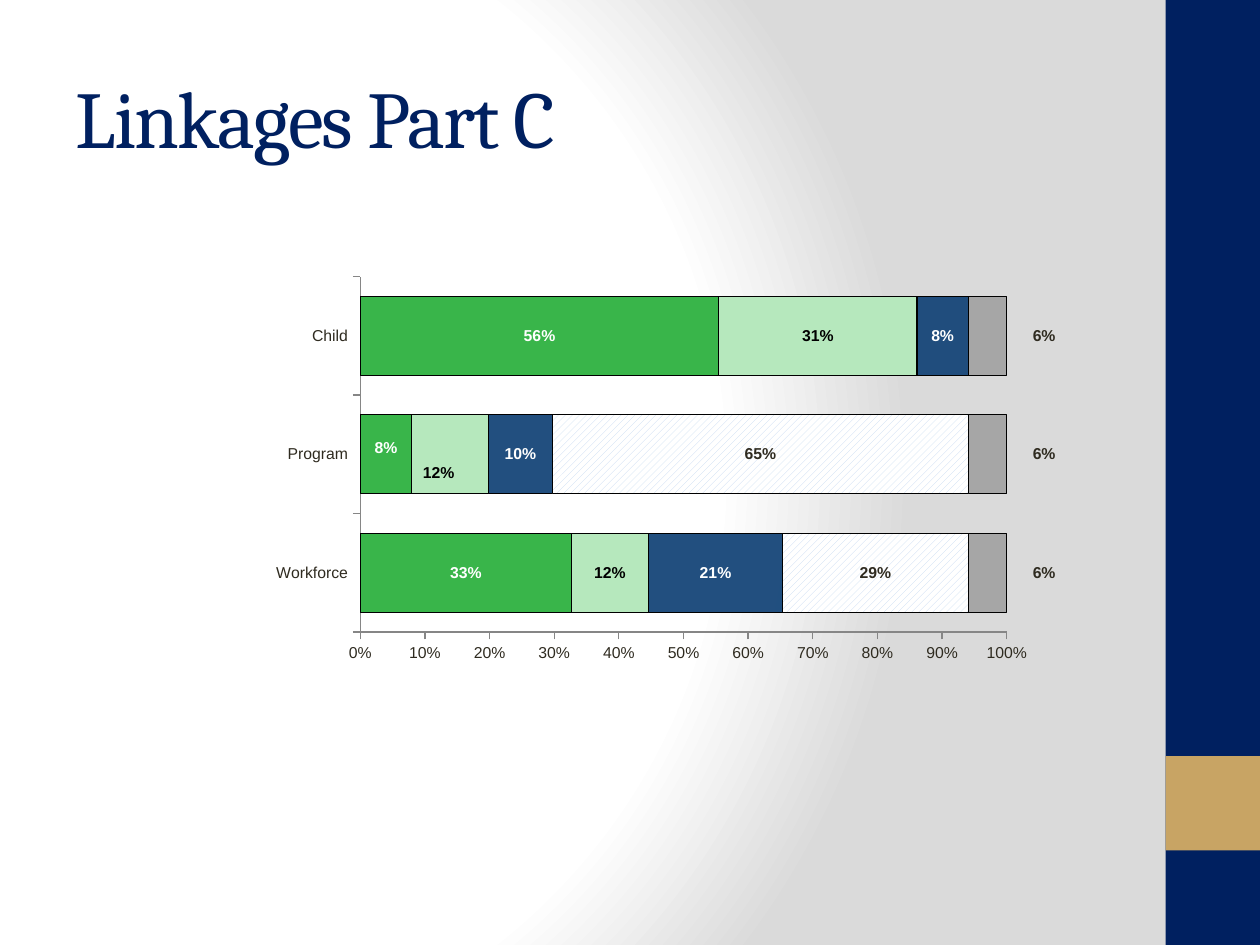
from lxml.etree import SubElement
from pptx import Presentation
from pptx.chart.data import CategoryChartData
from pptx.dml.color import RGBColor
from pptx.enum.chart import XL_CHART_TYPE, XL_LABEL_POSITION, XL_TICK_MARK
from pptx.enum.dml import MSO_PATTERN
from pptx.enum.shapes import MSO_SHAPE
from pptx.enum.text import MSO_ANCHOR, PP_ALIGN
from pptx.oxml import parse_xml
from pptx.oxml.ns import nsdecls, qn
from pptx.util import Inches, Pt

NAVY = RGBColor(0x00, 0x20, 0x60)
GOLD = RGBColor(0xC8, 0xA4, 0x64)
INK = RGBColor(0x2F, 0x2B, 0x20)
GREEN = RGBColor(0x39, 0xB5, 0x4A)
MINT = RGBColor(0xB6, 0xE8, 0xBD)
BLUE = RGBColor(0x15, 0x45, 0x78)
PALE = RGBColor(0xC6, 0xD9, 0xF1)
GREY = RGBColor(0xA6, 0xA6, 0xA6)
SILVER = RGBColor(0xDA, 0xDA, 0xDA)
AXIS = RGBColor(0x86, 0x86, 0x86)
WHITE = RGBColor(0xFF, 0xFF, 0xFF)
BLACK = RGBColor(0x00, 0x00, 0x00)


def set_font(font, color, **values):
    for name, value in values.items():
        setattr(font, name, value)
    font.color.rgb = color


def manual_layout(**values):
    items = "".join(f'<c:{tag} val="{value}"/>' for tag, value in values.items())
    return parse_xml(f'<c:layout {nsdecls("c")}>'
                     f'<c:manualLayout>{items}</c:manualLayout></c:layout>')


prs = Presentation()
prs.slide_width, prs.slide_height = Inches(10), Inches(7.5)
s = prs.slides.add_slide(prs.slide_layouts[5])

stops = "".join(f'<a:gs pos="{pos}"><a:srgbClr val="{color}"/></a:gs>'
                for pos, color in ((0, WHITE), (75000, WHITE), (100000, SILVER)))
s.element.cSld.insert(0, parse_xml(
    f'<p:bg {nsdecls("p", "a")}><p:bgPr><a:gradFill><a:gsLst>{stops}</a:gsLst>'
    '<a:path path="circle"><a:fillToRect l="20000" t="50000" r="100000" b="50000"/></a:path>'
    '</a:gradFill><a:effectLst/></p:bgPr></p:bg>'))

for top, height, color in ((0, 7.5, NAVY), (6, 0.75, GOLD)):
    sp = s.shapes.add_shape(MSO_SHAPE.RECTANGLE, Inches(9.25), Inches(top),
                            Inches(0.75), Inches(height))
    sp.shadow.inherit = False
    sp.fill.solid()
    sp.fill.fore_color.rgb = color
    sp.line.fill.background()

title = s.shapes.title
box = {"left": 0.5, "top": 0.3, "width": 8.33, "height": 1.25}
for name, value in box.items():
    setattr(title, name, Inches(value))
tf = title.text_frame
tf.vertical_anchor = MSO_ANCHOR.MIDDLE
p = tf.paragraphs[0]
p.alignment = PP_ALIGN.LEFT
r = p.add_run()
r.text = "Linkages Part C"
set_font(r.font, NAVY, name="Cambria", size=Pt(46))
r.font._element.set("spc", "-100")

series = [
    ((0.33, 0.08, 0.56), GREEN, WHITE),
    ((0.12, 0.12, 0.31), MINT, BLACK),
    ((0.21, 0.10, 0.08), BLUE, WHITE),
    ((0.29, 0.65, 0), WHITE, INK),
    ((0.06, 0.06, 0.06), GREY, INK),
]
data = CategoryChartData(number_format="0%")
data.categories = ["Workforce", "Program", "Child"]
for n, (values, _, _) in enumerate(series, 1):
    data.add_series(f"Series {n}", values)
chart = s.shapes.add_chart(XL_CHART_TYPE.BAR_STACKED_100, Inches(0.25), Inches(1.75),
                           Inches(9), Inches(4.95), data).chart
chart.has_legend = False
chart.has_title = False
set_font(chart.font, INK, name="Calibri", size=Pt(10))

plot = chart.plots[0]
plot.gap_width, plot.overlap, plot.vary_by_categories = 50, 100, False

for axis in (chart.category_axis, chart.value_axis):
    axis.has_major_gridlines = False
    axis.major_tick_mark = XL_TICK_MARK.OUTSIDE
    axis.minor_tick_mark = XL_TICK_MARK.NONE
    axis.format.line.color.rgb = AXIS
    axis.format.line.width = Pt(0.75)
    set_font(axis.tick_labels.font, INK, name="Arial", size=Pt(9))
va = chart.value_axis
va.minimum_scale, va.maximum_scale, va.major_unit = 0, 1, 0.1
va.tick_labels.number_format = "0%"
va.tick_labels.number_format_is_linked = False

label_format = {"name": "Arial", "size": Pt(9), "bold": True}
for ser, (_, color, label_color) in zip(plot.series, series):
    fill, line = ser.format.fill, ser.format.line
    if color == WHITE:
        fill.patterned()
        fill.pattern = MSO_PATTERN.WIDE_UPWARD_DIAGONAL
        fill.fore_color.rgb, fill.back_color.rgb = PALE, WHITE
    else:
        fill.solid()
        fill.fore_color.rgb = color
    line.color.rgb = BLACK
    line.width = Pt(0.75)
    labels = ser.data_labels
    labels.show_value = True
    labels.number_format = "0%;;"
    labels.number_format_is_linked = False
    set_font(labels.font, label_color, **label_format)
    for leader in labels._element.findall(qn("c:showLeaderLines")):
        leader.set("val", "0")

blue_fill = plot.series[2]._element.find(qn("c:spPr")).find(qn("a:solidFill"))
SubElement(blue_fill[0], qn("a:alpha")).set("val", "94000")

moved_labels = [(0, 1, 0, -0.01), (1, 1, -0.01, 0.03),
                (4, 0, 0.05, 0), (4, 1, 0.05, 0), (4, 2, 0.05, 0)]
for n, idx, dx, dy in moved_labels:
    ser = plot.series[n]
    values, _, label_color = series[n]
    label = ser.points[idx].data_label
    label.position = XL_LABEL_POSITION.CENTER
    r = label.text_frame.paragraphs[0].add_run()
    r.text = f"{values[idx]:.0%}"
    set_font(r.font, label_color, **label_format)
    dLbl = ser.data_labels._element.xpath(f"c:dLbl[c:idx/@val={idx}]")[0]
    dLbl.insert(1, manual_layout(x=dx, y=dy))

plot_area = chart._chartSpace.chart.plotArea
for old in plot_area.findall(qn("c:layout")):
    plot_area.remove(old)
plot_area.insert(0, manual_layout(layoutTarget="inner", xMode="edge", yMode="edge",
                                  x=0.29, y=0.09, w=0.57, h=0.57))

prs.save("out.pptx")
